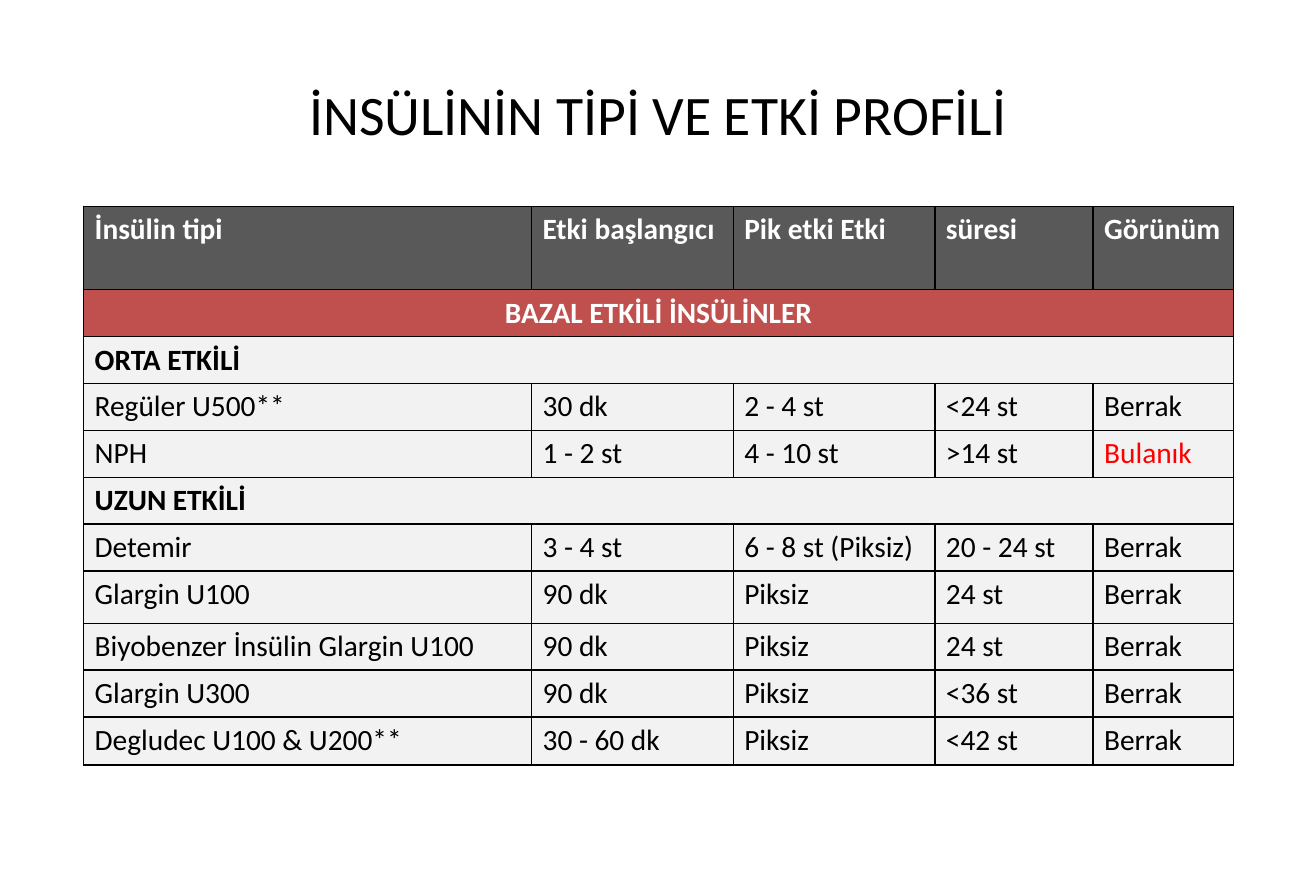
from lxml.etree import SubElement
from pptx import Presentation
from pptx.dml.color import RGBColor
from pptx.enum.text import MSO_ANCHOR, PP_ALIGN
from pptx.oxml.ns import qn
from pptx.util import Inches, Pt

COLORS = {
    "black": "000000",
    "white": "FFFFFF",
    "red": "FF0000",
    "header": "595959",
    "section": "C0504D",
    "body": "F2F2F2",
}
FONT = "Calibri"
COLUMN_WIDTHS = [4.02, 1.81, 1.81, 1.42, 1.26]
HEADER_HEIGHT, ROW_HEIGHT = 0.75, 0.42
TALLER_ROWS = {"Glargin U100": 0.47, "Degludec U100 & U200**": 0.43}

# A row with one entry spans the whole table.
INSULIN_ROWS = [
    ["İnsülin tipi", "Etki başlangıcı", "Pik etki Etki", "süresi", "Görünüm"],
    ["BAZAL ETKİLİ İNSÜLİNLER"],
    ["ORTA ETKİLİ"],
    ["Regüler U500**", "30 dk", "2 - 4 st", "<24 st", "Berrak"],
    ["NPH", "1 - 2 st", "4 - 10 st", ">14 st", "Bulanık"],
    ["UZUN ETKİLİ"],
    ["Detemir", "3 - 4 st", "6 - 8 st (Piksiz)", "20 - 24 st", "Berrak"],
    ["Glargin U100", "90 dk", "Piksiz", "24 st", "Berrak"],
    ["Biyobenzer İnsülin Glargin U100", "90 dk", "Piksiz", "24 st", "Berrak"],
    ["Glargin U300", "90 dk", "Piksiz", "<36 st", "Berrak"],
    ["Degludec U100 & U200**", "30 - 60 dk", "Piksiz", "<42 st", "Berrak"],
]


def rgb(name):
    return RGBColor.from_string(COLORS[name])


def write_text(frame, text, color, size, bold=False, align=PP_ALIGN.LEFT):
    para = frame.paragraphs[0]
    para.alignment = align
    span = para.add_run()
    span.text = text
    font_format = {"name": FONT, "size": Pt(size), "bold": bold}
    for attribute, value in font_format.items():
        setattr(span.font, attribute, value)
    span.font.color.rgb = rgb(color)


def add_title(page, text):
    title = page.shapes.title
    position = {"left": 0.59, "top": 0.67, "width": 10.63, "height": 1.33}
    for attribute, value in position.items():
        setattr(title, attribute, Inches(value))
    title.text_frame.vertical_anchor = MSO_ANCHOR.TOP
    title.text_frame.word_wrap = True
    write_text(title.text_frame, text, "black", 36, align=PP_ALIGN.CENTER)


def style_cell(cell, fill):
    """Draw a thin black border on every side, then fill the cell."""
    properties = cell._tc.get_or_add_tcPr()
    for side in ("a:lnL", "a:lnR", "a:lnT", "a:lnB"):
        line = SubElement(properties, qn(side), w=str(Pt(1)))
        solid = SubElement(line, qn("a:solidFill"))
        SubElement(solid, qn("a:srgbClr"), val=COLORS["black"])
    cell.fill.solid()
    cell.fill.fore_color.rgb = rgb(fill)
    cell.vertical_anchor = MSO_ANCHOR.TOP


def row_style(index):
    """Return fill, text colour and alignment of a row."""
    if index == 0:
        return "header", "white", PP_ALIGN.LEFT
    if index == 1:
        return "section", "white", PP_ALIGN.CENTER
    return "body", "black", PP_ALIGN.LEFT


def add_insulin_table(page):
    heights = [HEADER_HEIGHT] + [
        TALLER_ROWS.get(row[0], ROW_HEIGHT) for row in INSULIN_ROWS[1:]
    ]
    table = page.shapes.add_table(
        len(INSULIN_ROWS), len(COLUMN_WIDTHS), Inches(0.75), Inches(1.85),
        Inches(sum(COLUMN_WIDTHS)), Inches(sum(heights)),
    ).table
    for column, width in zip(table.columns, COLUMN_WIDTHS):
        column.width = Inches(width)
    for index, (texts, height) in enumerate(zip(INSULIN_ROWS, heights)):
        row = table.rows[index]
        row.height = Inches(height)
        fill, color, align = row_style(index)
        for cell in row.cells:
            style_cell(cell, fill)
        spans_table = len(texts) == 1
        if spans_table:
            table.cell(index, 0).merge(table.cell(index, len(COLUMN_WIDTHS) - 1))
        for cell, text in zip(row.cells, texts):
            text_color = "red" if text == "Bulanık" else color
            bold = spans_table or index == 0
            write_text(cell.text_frame, text, text_color, 19, bold, align)


def main():
    deck = Presentation()
    deck.slide_width, deck.slide_height = Inches(11.81), Inches(7.95)
    page = deck.slides.add_slide(deck.slide_layouts[5])
    page.background.fill.solid()
    page.background.fill.fore_color.rgb = rgb("white")
    add_title(page, "İNSÜLİNİN TİPİ VE ETKİ PROFİLİ")
    add_insulin_table(page)
    deck.save("out.pptx")


if __name__ == "__main__":
    main()
